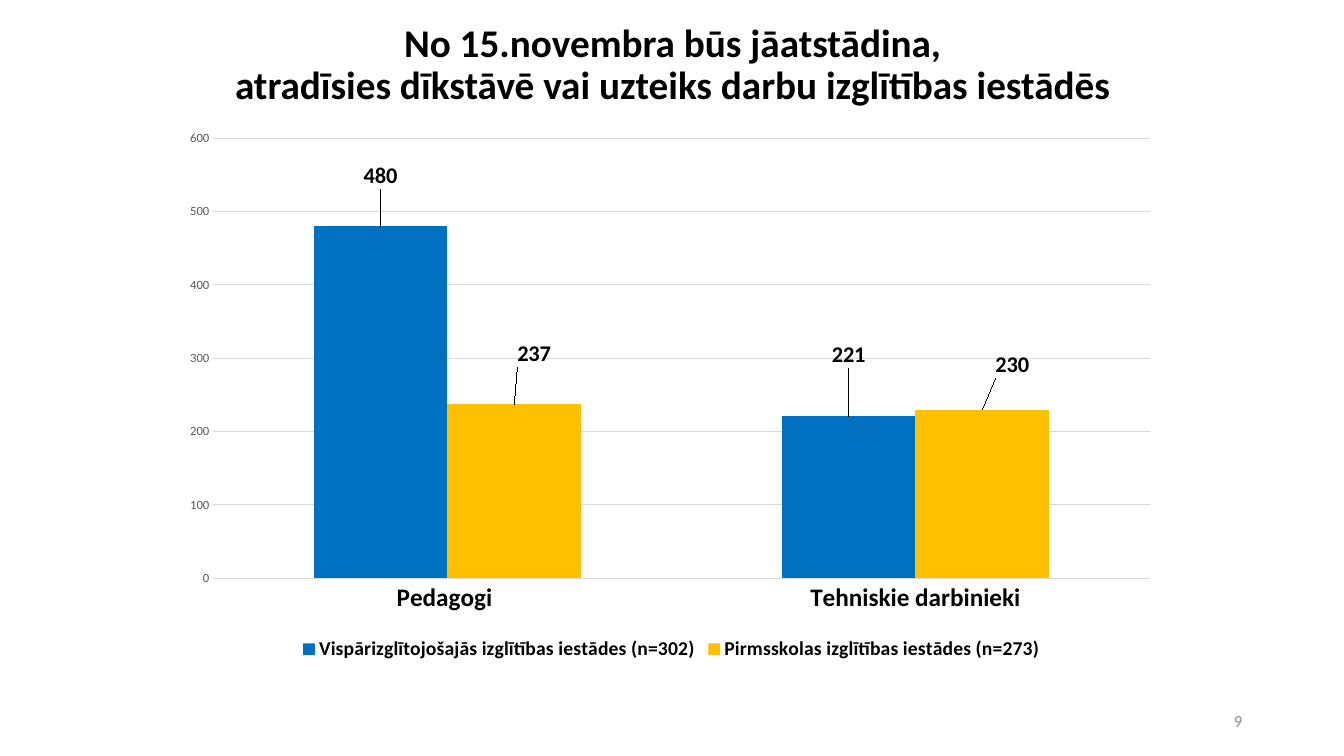
from lxml.etree import SubElement
from pptx import Presentation
from pptx.chart.data import CategoryChartData
from pptx.dml.color import RGBColor
from pptx.enum.chart import XL_CHART_TYPE, XL_LABEL_POSITION, XL_LEGEND_POSITION, XL_TICK_MARK
from pptx.enum.text import MSO_ANCHOR, PP_ALIGN
from pptx.oxml.ns import qn
from pptx.util import Inches, Pt

BLACK = RGBColor(0x00, 0x00, 0x00)
AXIS_GRAY = RGBColor(0x59, 0x59, 0x59)
NUMBER_GRAY = RGBColor(0x8C, 0x8C, 0x8C)
GRID_GRAY = RGBColor(0xD9, 0xD9, 0xD9)
BLUE = RGBColor(0x00, 0x70, 0xC0)
YELLOW = RGBColor(0xFF, 0xC0, 0x00)


def format_font(font, size, color=BLACK, bold=False):
    for name, value in {"name": "Calibri", "size": Pt(size), "bold": bold}.items():
        setattr(font, name, value)
    font.color.rgb = color


def add_layout(parent, index, settings):
    """Give a chart part a manual layout, in fractions of the chart."""
    for old_layout in parent.findall(qn("c:layout")):
        parent.remove(old_layout)
    layout = SubElement(parent, qn("c:layout"))
    manual = SubElement(layout, qn("c:manualLayout"))
    for name, value in settings.items():
        SubElement(manual, qn(f"c:{name}")).set("val", str(value))
    parent.insert(index, layout)


deck = Presentation()
deck.slide_width, deck.slide_height = Inches(13.33), Inches(7.5)
page = deck.slides.add_slide(deck.slide_layouts[5])

# Title
title = page.shapes.title
title.left, title.top = Inches(0.19), Inches(0.2)
title.width, title.height = Inches(12.96), Inches(0.9)
title.text_frame.text = (
    "No 15.novembra būs jāatstādina,\vatradīsies dīkstāvē vai uzteiks darbu izglītības iestādēs"
)
title.text_frame.vertical_anchor = MSO_ANCHOR.MIDDLE
heading = title.text_frame.paragraphs[0]
heading.alignment = PP_ALIGN.CENTER
heading.line_spacing = 0.9
for span in heading.runs:
    format_font(span.font, 28, bold=True)

# Chart
staff_data = CategoryChartData()
staff_data.categories = ["Pedagogi ", "Tehniskie darbinieki"]
staff_data.add_series("Vispārizglītojošajās izglītības iestādes (n=302)", [480, 221])
staff_data.add_series("Pirmsskolas izglītības iestādes (n=273)", [237, 230])
chart = page.shapes.add_chart(
    XL_CHART_TYPE.COLUMN_CLUSTERED,
    Inches(1.72), Inches(1.21), Inches(9.88), Inches(5.39), staff_data,
).chart
chart.has_title = False
format_font(chart.font, 10)

chart.has_legend = True
chart.legend.position = XL_LEGEND_POSITION.BOTTOM
chart.legend.include_in_layout = False
format_font(chart.legend.font, 14, bold=True)

for axis in (chart.category_axis, chart.value_axis):
    axis.major_tick_mark = axis.minor_tick_mark = XL_TICK_MARK.NONE
    axis.format.line.fill.background()
format_font(chart.category_axis.tick_labels.font, 18, bold=True)
format_font(chart.value_axis.tick_labels.font, 9, AXIS_GRAY)
for name, value in {"minimum_scale": 0, "maximum_scale": 600, "major_unit": 100}.items():
    setattr(chart.value_axis, name, value)
gridline = chart.value_axis.major_gridlines.format.line
gridline.color.rgb = GRID_GRAY
gridline.width = Pt(0.75)

plot = chart.plots[0]
plot.gap_width, plot.overlap = 150, 0
plot.vary_by_categories = False
for series, color in zip(plot.series, (BLUE, YELLOW)):
    series.format.fill.solid()
    series.format.fill.fore_color.rgb = color
    series.data_labels.show_value = True
    format_font(series.data_labels.font, 16, bold=True)
    for index in range(2):
        label = series.points[index].data_label
        label.position = XL_LABEL_POSITION.OUTSIDE_END
        format_font(label.font, 16, bold=True)

# Labels are shifted from the bar ends, series by series
label_shifts = [(0, -0.06), (0, -0.08), (0.02, -0.06), (0.03, -0.05)]
for label, (x, y) in zip(chart.element.iter(qn("c:dLbl")), label_shifts):
    add_layout(label, 1, {"x": x, "y": y})
plot_area = next(chart.element.iter(qn("c:plotArea")))
add_layout(plot_area, 0, {
    "layoutTarget": "inner", "xMode": "edge", "yMode": "edge",
    "x": 0.04, "y": 0.03, "w": 0.94, "h": 0.81,
})

# Page number
number_box = page.shapes.add_textbox(Inches(9.42), Inches(6.95), Inches(3), Inches(0.4))
number_box.text_frame.word_wrap = True
number_box.text_frame.vertical_anchor = MSO_ANCHOR.MIDDLE
number = number_box.text_frame.paragraphs[0]
number.alignment = PP_ALIGN.RIGHT
span = number.add_run()
span.text = "9"
format_font(span.font, 12, NUMBER_GRAY)

deck.save("out.pptx")
